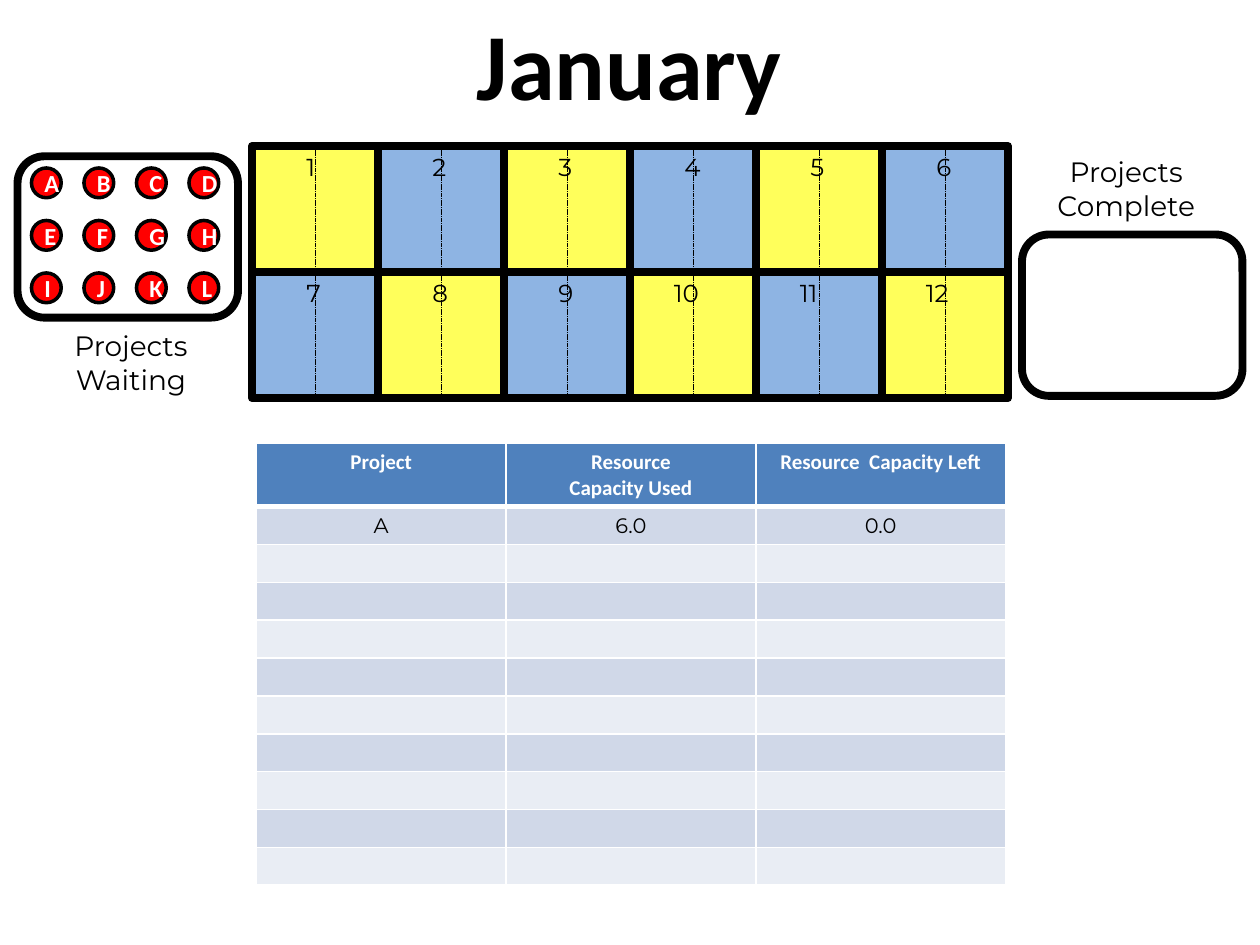
from dataclasses import dataclass

from lxml.etree import SubElement
from pptx import Presentation
from pptx.dml.color import RGBColor
from pptx.enum.dml import MSO_LINE
from pptx.enum.shapes import MSO_CONNECTOR, MSO_SHAPE
from pptx.enum.text import MSO_ANCHOR, MSO_AUTO_SIZE, PP_ALIGN
from pptx.oxml.ns import qn
from pptx.util import Pt

COLORS = {
    "black": "000000", "white": "FFFFFF", "red": "FF0000",
    "yellow": "FFFF5B", "blue": "8EB4E3",
    "header": "4F81BD", "band_dark": "D0D8E8", "band_light": "E9EDF4",
}


@dataclass
class Box:
    left: float
    top: float
    width: float
    height: float

    def points(self) -> tuple:
        return Pt(self.left), Pt(self.top), Pt(self.width), Pt(self.height)


@dataclass
class TextStyle:
    size: float
    font: str = "Montserrat"
    color: str = "black"
    bold: bool = False
    align: PP_ALIGN = PP_ALIGN.CENTER


PROJECT_STYLE = TextStyle(14, "Calibri", "white", True)
NUMBER_STYLE = TextStyle(14, align=PP_ALIGN.LEFT)
LABEL_STYLE = TextStyle(16)
TITLE_STYLE = TextStyle(54, "Calibri", bold=True)
HEADER_STYLE = TextStyle(12, "Calibri", "white", True)
BODY_STYLE = TextStyle(12)

# Calendar grid and project grid
DAY_SIZE, DAY_LEFT, DAY_TOP, DAY_COLUMNS, DAY_ROWS = 72, 144, 83.5, 6, 2
PROJECT_SIZE, PROJECT_PITCH, PROJECT_LEFT, PROJECT_TOP = 17, 30, 18, 96

# Table contents
HEADERS = [["Project"], ["Resource", "Capacity Used"], ["Resource  Capacity Left"]]
FIRST_ROW = [["A"], ["6.0"], ["0.0"]]
EMPTY_ROWS = 9
COLUMN_WIDTH, HEADER_HEIGHT, ROW_HEIGHT = 142.7, 36, 21.6


def rgb(name: str) -> RGBColor:
    return RGBColor.from_string(COLORS[name])


def write(frame, lines: list[str], style: TextStyle) -> None:
    for index, line in enumerate(lines):
        paragraph = frame.add_paragraph() if index else frame.paragraphs[0]
        paragraph.alignment = style.align
        run = paragraph.add_run()
        run.text = line
        run.font.size = Pt(style.size)
        run.font.name = style.font
        run.font.bold = style.bold
        run.font.color.rgb = rgb(style.color)


def add_outlined(slide, kind: MSO_SHAPE, box: Box, line_width: float, fill: str = ""):
    shape = slide.shapes.add_shape(kind, *box.points())
    shape.shadow.inherit = False
    if fill:
        shape.fill.solid()
        shape.fill.fore_color.rgb = rgb(fill)
    else:
        shape.fill.background()
    shape.line.color.rgb = rgb("black")
    shape.line.width = Pt(line_width)
    return shape


def add_label(slide, text: str, box: Box, style: TextStyle) -> None:
    frame = slide.shapes.add_textbox(*box.points()).text_frame
    frame.word_wrap = True
    frame.auto_size = MSO_AUTO_SIZE.SHAPE_TO_FIT_TEXT
    write(frame, [text], style)


def add_divider(slide, x: float, top: float, bottom: float) -> None:
    divider = slide.shapes.add_connector(
        MSO_CONNECTOR.STRAIGHT, Pt(x), Pt(top), Pt(x), Pt(bottom))
    divider.line.color.rgb = rgb("black")
    divider.line.width = Pt(0.25)
    divider.line.dash_style = MSO_LINE.SQUARE_DOT
    SubElement(divider._element.spPr, qn("a:effectLst"))


def add_solid_fill(parent, color: str) -> None:
    fill = SubElement(parent, qn("a:solidFill"))
    SubElement(fill, qn("a:srgbClr"), val=COLORS[color])


def format_cell(cell, lines: list[str], style: TextStyle, fill: str, bottom: float) -> None:
    properties = cell._tc.get_or_add_tcPr()
    for side, width in (("L", 1), ("R", 1), ("T", 1), ("B", bottom)):
        border = SubElement(properties, qn(f"a:ln{side}"), w=str(Pt(width)))
        add_solid_fill(border, "white")
    cell.fill.solid()
    cell.fill.fore_color.rgb = rgb(fill)
    if lines:
        write(cell.text_frame, lines, style)
    else:
        # An empty cell still needs a text size to keep its row low
        SubElement(cell.text_frame.paragraphs[0]._p, qn("a:endParaRPr"),
                   sz=str(int(style.size * 100)))


def add_title(slide) -> None:
    title = slide.shapes.title
    title.left, title.top, title.width, title.height = Box(264.2, 0, 190.8, 72.7).points()
    frame = title.text_frame
    frame.word_wrap = False
    frame.auto_size = MSO_AUTO_SIZE.SHAPE_TO_FIT_TEXT
    frame.vertical_anchor = MSO_ANCHOR.TOP
    write(frame, ["January"], TITLE_STYLE)
    properties = frame.paragraphs[0].runs[0].font._element
    outline = properties.makeelement(qn("a:ln"), {"w": str(Pt(1))})
    add_solid_fill(outline, "black")
    properties.insert(0, outline)


def add_calendar(slide) -> None:
    cells = [(row, column) for row in range(DAY_ROWS) for column in range(DAY_COLUMNS)]
    for row, column in cells:
        box = Box(DAY_LEFT + column * DAY_SIZE, DAY_TOP + row * DAY_SIZE, DAY_SIZE, DAY_SIZE)
        fill = "blue" if (row + column) % 2 else "yellow"
        add_outlined(slide, MSO_SHAPE.RECTANGLE, box, 4.5, fill)
    for column in range(DAY_COLUMNS):
        add_divider(slide, DAY_LEFT + (column + 0.5) * DAY_SIZE,
                    DAY_TOP, DAY_TOP + DAY_ROWS * DAY_SIZE)
    for number, (row, column) in enumerate(cells, start=1):
        indent, width = (24, 30) if number < 10 else (18, 36)
        box = Box(DAY_LEFT + column * DAY_SIZE + indent, DAY_TOP + row * DAY_SIZE, width, 24.5)
        add_label(slide, str(number), box, NUMBER_STYLE)


def add_projects(slide) -> None:
    for index, letter in enumerate("ABCDEFGHIJKL"):
        row, column = divmod(index, 4)
        box = Box(PROJECT_LEFT + column * PROJECT_PITCH, PROJECT_TOP + row * PROJECT_PITCH,
                  PROJECT_SIZE, PROJECT_SIZE)
        circle = add_outlined(slide, MSO_SHAPE.OVAL, box, 2, "red")
        circle.text_frame.vertical_anchor = MSO_ANCHOR.MIDDLE
        write(circle.text_frame, [letter], PROJECT_STYLE)


def add_capacity_table(slide) -> None:
    rows = [HEADERS, FIRST_ROW] + [[[]] * len(HEADERS)] * EMPTY_ROWS
    box = Box(146.5, 253.5, COLUMN_WIDTH * len(HEADERS),
              HEADER_HEIGHT + ROW_HEIGHT * (len(rows) - 1))
    table = slide.shapes.add_table(len(rows), len(HEADERS), *box.points()).table
    for column in table.columns:
        column.width = Pt(COLUMN_WIDTH)
    for index, row in enumerate(rows):
        table.rows[index].height = Pt(ROW_HEIGHT if index else HEADER_HEIGHT)
        band = "band_dark" if index % 2 else "band_light"
        style, fill, bottom = (BODY_STYLE, band, 1) if index else (HEADER_STYLE, "header", 3)
        for column, lines in enumerate(row):
            format_cell(table.cell(index, column), lines, style, fill, bottom)


def main() -> None:
    presentation = Presentation()
    presentation.slide_width, presentation.slide_height = Pt(720), Pt(540)
    slide = presentation.slides.add_slide(presentation.slide_layouts[5])
    add_title(slide)
    add_calendar(slide)
    add_projects(slide)
    # Waiting and complete areas
    add_outlined(slide, MSO_SHAPE.ROUNDED_RECTANGLE, Box(10, 89.3, 126, 92.2), 4.5)
    add_label(slide, "Projects Waiting", Box(17.3, 184.3, 115.2, 46), LABEL_STYLE)
    add_label(slide, "Projects Complete", Box(586, 85, 115.2, 46), LABEL_STYLE)
    add_outlined(slide, MSO_SHAPE.ROUNDED_RECTANGLE, Box(584, 134, 126, 92.2), 4.5)
    add_capacity_table(slide)
    presentation.save("out.pptx")


if __name__ == "__main__":
    main()
